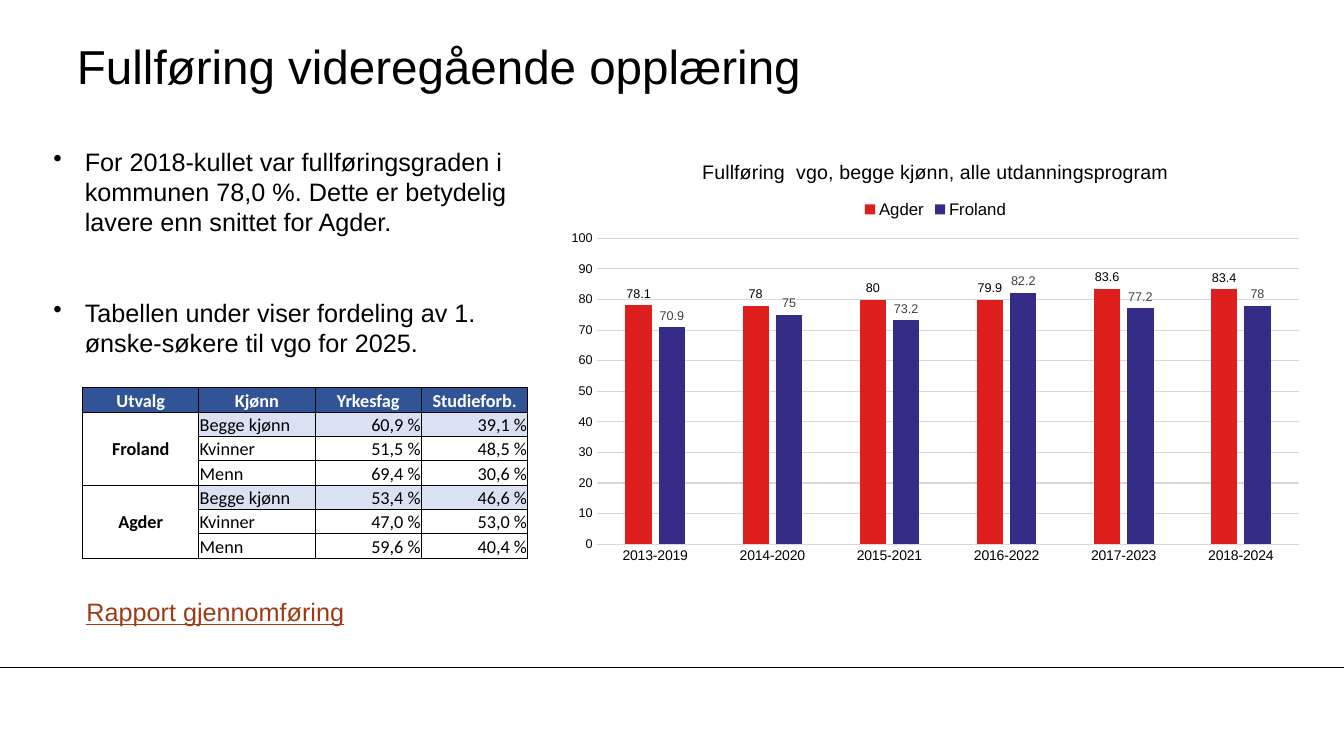
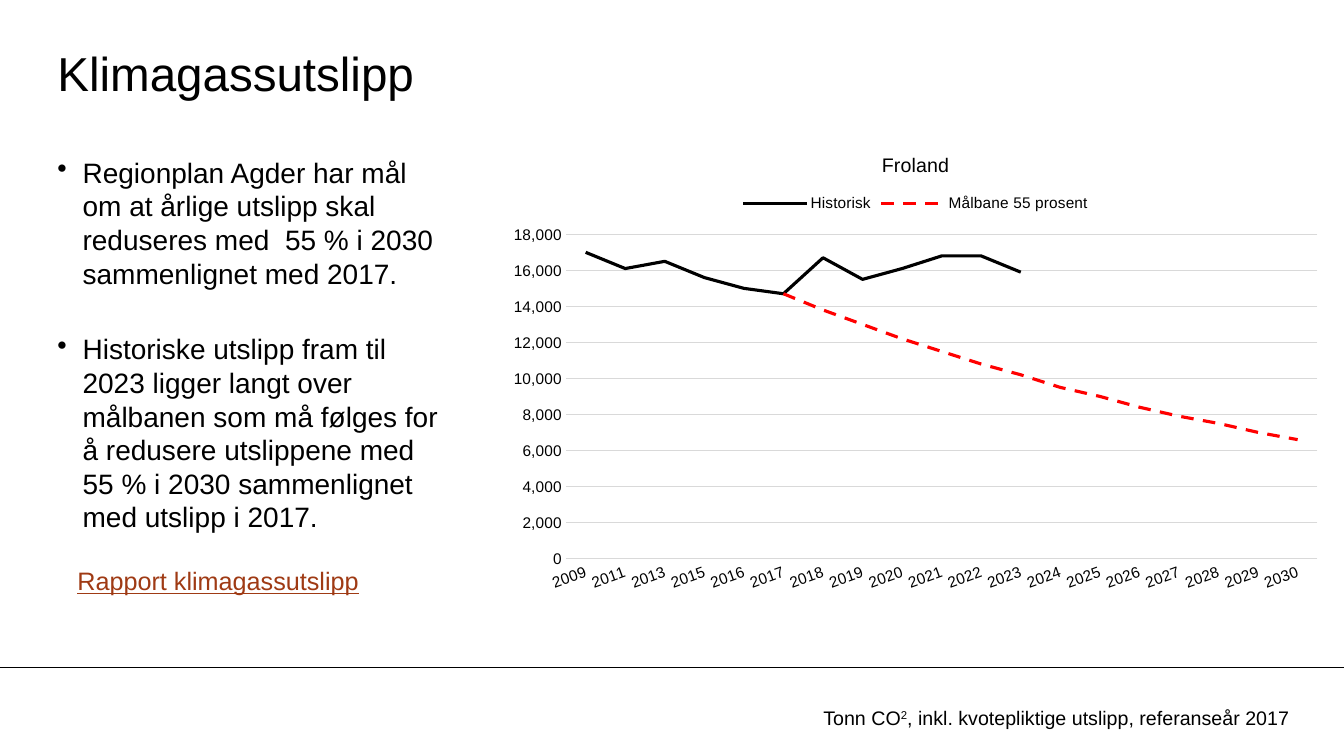
from lxml.etree import SubElement
from pptx import Presentation
from pptx.chart.data import CategoryChartData
from pptx.dml.color import RGBColor
from pptx.enum.chart import XL_CHART_TYPE, XL_LABEL_POSITION, XL_LEGEND_POSITION, XL_MARKER_STYLE, XL_TICK_MARK
from pptx.enum.dml import MSO_LINE
from pptx.enum.shapes import MSO_CONNECTOR
from pptx.enum.text import MSO_ANCHOR, MSO_AUTO_SIZE, PP_ALIGN
from pptx.oxml.ns import qn
from pptx.util import Pt

# Shared look
SLIDE_WIDTH, SLIDE_HEIGHT = 960, 540
TITLE_SIZE = (799, 54)
FOOTER_LINE_TOP = 476.5
FONT = "Arial"
TABLE_FONT = "Calibri"
BLACK = RGBColor(0x00, 0x00, 0x00)
WHITE = RGBColor(0xFF, 0xFF, 0xFF)
GRAY = RGBColor(0xD9, 0xD9, 0xD9)
DARK_GRAY = RGBColor(0x40, 0x40, 0x40)
LINK = RGBColor(0x9F, 0x3A, 0x14)
HEADER_BLUE = RGBColor(0x30, 0x54, 0x96)
ROW_BLUE = RGBColor(0xD9, 0xE1, 0xF2)
AGDER_RED = RGBColor(0xDF, 0x1F, 0x1D)
FROLAND_BLUE = RGBColor(0x34, 0x2C, 0x86)
TARGET_RED = RGBColor(0xFF, 0x00, 0x00)

# Content
APPLICANTS = {
    "Froland": [("Begge kjønn", "60,9 %", "39,1 %"),
                ("Kvinner", "51,5 %", "48,5 %"),
                ("Menn", "69,4 %", "30,6 %")],
    "Agder": [("Begge kjønn", "53,4 %", "46,6 %"),
              ("Kvinner", "47,0 %", "53,0 %"),
              ("Menn", "59,6 %", "40,4 %")],
}
COHORTS = [f"{year}-{year + 6}" for year in range(2013, 2019)]
COMPLETION = {
    "Agder": [78.1, 78, 80, 79.9, 83.6, 83.4],
    "Froland": [70.9, 75, 73.2, 82.2, 77.2, 78],
}
EMISSION_YEARS = [str(year) for year in (2009, 2011, 2013, *range(2015, 2031))]
EMISSIONS = {
    "Historisk": [17000, 16100, 16500, 15600, 15000, 14700, 16700, 15500,
                  16100, 16800, 16800, 15900] + [None] * 7,
    "Målbane 55 prosent": [None] * 5 + [14700, 13800, 13000, 12200, 11500, 10800, 10200,
                                        9500, 9000, 8400, 7900, 7500, 7000, 6600],
}


def apply_format(target, values):
    for name, value in values.items():
        setattr(target, name, value)


def format_font(font, size, color=BLACK, name=FONT, **values):
    apply_format(font, {"size": Pt(size), "name": name, **values})
    font.color.rgb = color


def points(*lengths):
    return [Pt(length) for length in lengths]


def set_margins(target, left, top, right, bottom):
    names = ("margin_left", "margin_top", "margin_right", "margin_bottom")
    apply_format(target, dict(zip(names, points(left, top, right, bottom))))


# Slide frame
def add_slide(presentation, title, left, top):
    slide = presentation.slides.add_slide(presentation.slide_layouts[5])
    line = slide.shapes.add_connector(
        MSO_CONNECTOR.STRAIGHT, *points(0, FOOTER_LINE_TOP, SLIDE_WIDTH, FOOTER_LINE_TOP))
    line.line.color.rgb = BLACK
    line.line.width = Pt(0.75)
    SubElement(line._element.spPr, qn("a:effectLst"))

    shape = slide.shapes.title
    apply_format(shape, dict(zip(("left", "top", "width", "height"),
                                 points(left, top, *TITLE_SIZE))))
    frame = shape.text_frame
    frame.text = title
    apply_format(frame, {"word_wrap": True, "auto_size": MSO_AUTO_SIZE.NONE,
                         "vertical_anchor": MSO_ANCHOR.MIDDLE})
    set_margins(frame, 0, 0, 0, 0)
    paragraph = frame.paragraphs[0]
    paragraph.alignment = PP_ALIGN.LEFT
    format_font(paragraph.runs[0].font, 34)
    return slide


# Text
def add_text_frame(slide, box):
    frame = slide.shapes.add_textbox(*points(*box)).text_frame
    frame.word_wrap = True
    return frame


def add_run(paragraph, text, size, color=BLACK, **values):
    run = paragraph.add_run()
    run.text = text
    format_font(run.font, size, color, **values)
    return run


def add_bullets(slide, box, texts, size, indent, gap):
    frame = add_text_frame(slide, box)
    for index, text in enumerate(texts):
        paragraph = frame.add_paragraph() if index else frame.paragraphs[0]
        properties = paragraph._p.get_or_add_pPr()
        properties.set("marL", str(Pt(indent)))
        properties.set("indent", str(-Pt(indent)))
        SubElement(properties, qn("a:buChar")).set("char", "•")
        paragraph.line_spacing = Pt(size * 1.2)
        paragraph.space_before = Pt(gap if index else 0)
        add_run(paragraph, text, size)
    return frame


def add_report_label(slide, box, text):
    paragraph = add_text_frame(slide, box).paragraphs[0]
    add_run(paragraph, text, 18, LINK, underline=True)


# Table
def format_cell(cell, text, fill, color=BLACK, bold=False,
                alignment=PP_ALIGN.LEFT, anchor=MSO_ANCHOR.BOTTOM):
    cell.vertical_anchor = anchor
    set_margins(cell, 0.7, 0.7, 0.7, 0)
    properties = cell._tc.get_or_add_tcPr()
    for side in ("lnL", "lnR", "lnT", "lnB"):
        border = SubElement(properties, qn(f"a:{side}"), w=str(Pt(0.5)))
        solid = SubElement(border, qn("a:solidFill"))
        SubElement(solid, qn("a:srgbClr"), val=str(BLACK))
    cell.fill.solid()
    cell.fill.fore_color.rgb = fill
    paragraph = cell.text_frame.paragraphs[0]
    paragraph.alignment = alignment
    format_font(paragraph.font, 13, color, TABLE_FONT)
    if text:
        add_run(paragraph, text, 13, color, name=TABLE_FONT, bold=bold)


def add_applicant_table(slide, left, top):
    headers = ("Utvalg", "Kjønn", "Yrkesfag", "Studieforb.")
    widths = (83, 83, 76, 76)
    row_height = 17.38
    row_count = 1 + sum(len(rows) for rows in APPLICANTS.values())
    table = slide.shapes.add_table(
        row_count, len(headers),
        *points(left, top, sum(widths), row_count * row_height)).table
    apply_format(table, {"first_row": False, "horz_banding": False})
    for column, width in zip(table.columns, widths):
        column.width = Pt(width)
    for row in table.rows:
        row.height = Pt(row_height)

    for column, header in enumerate(headers):
        format_cell(table.cell(0, column), header, HEADER_BLUE, WHITE, True, PP_ALIGN.CENTER)
    row = 1
    for area, area_rows in APPLICANTS.items():
        table.cell(row, 0).merge(table.cell(row + len(area_rows) - 1, 0))
        for index, values in enumerate(area_rows):
            format_cell(table.cell(row, 0), "" if index else area, WHITE, bold=True,
                        alignment=PP_ALIGN.CENTER, anchor=MSO_ANCHOR.MIDDLE)
            for column, value in enumerate(values, 1):
                format_cell(table.cell(row, column), value, WHITE if index else ROW_BLUE,
                            alignment=PP_ALIGN.LEFT if column == 1 else PP_ALIGN.RIGHT)
            row += 1


# Charts
def add_chart(slide, kind, box, title, categories, series, maximum, unit,
              category_size, value_size, legend_size):
    data = CategoryChartData()
    data.categories = categories
    for name, values in series.items():
        data.add_series(name, values)
    chart = slide.shapes.add_chart(kind, *points(*box), data).chart
    format_font(chart.font, 10)
    paragraph = chart.chart_title.text_frame.paragraphs[0]
    add_run(paragraph, title, 14, bold=False)

    chart.has_legend = True
    apply_format(chart.legend, {"position": XL_LEGEND_POSITION.TOP, "include_in_layout": False})
    format_font(chart.legend.font, legend_size)

    for axis, size in ((chart.category_axis, category_size), (chart.value_axis, value_size)):
        apply_format(axis, {"major_tick_mark": XL_TICK_MARK.NONE,
                            "minor_tick_mark": XL_TICK_MARK.NONE})
        format_font(axis.tick_labels.font, size)
    category_line = chart.category_axis.format.line
    value_axis = chart.value_axis
    apply_format(value_axis, {"minimum_scale": 0, "maximum_scale": maximum,
                              "major_unit": unit, "has_major_gridlines": True})
    apply_format(value_axis.tick_labels, {"number_format": "#,##0",
                                          "number_format_is_linked": False})
    value_axis.format.line.fill.background()
    for line in (category_line, value_axis.major_gridlines.format.line):
        line.color.rgb = GRAY
        line.width = Pt(0.75)
    chart.plots[0].vary_by_categories = False
    return chart


def add_completion_chart(slide):
    chart = add_chart(slide, XL_CHART_TYPE.COLUMN_CLUSTERED, (397.5, 101, 541.5, 308),
                      "Fullføring  vgo, begge kjønn, alle utdanningsprogram",
                      COHORTS, COMPLETION, 100, 10, 10, 9, 12)
    plot = chart.plots[0]
    apply_format(plot, {"gap_width": 219, "overlap": -27})
    colors = ((AGDER_RED, BLACK), (FROLAND_BLUE, DARK_GRAY))
    for series, (bar_color, label_color) in zip(plot.series, colors):
        series.format.fill.solid()
        series.format.fill.fore_color.rgb = bar_color
        labels = series.data_labels
        apply_format(labels, {"show_value": True, "position": XL_LABEL_POSITION.OUTSIDE_END})
        format_font(labels.font, 9, label_color)


def add_emission_chart(slide):
    chart = add_chart(slide, XL_CHART_TYPE.LINE, (355, 96, 598, 333), "Froland",
                      EMISSION_YEARS, EMISSIONS, 18000, 2000, 11, 11, 11)
    # Slant the years by 20 degrees
    body = chart.category_axis._element.find(f"{qn('c:txPr')}/{qn('a:bodyPr')}")
    body.set("rot", str(-20 * 60000))
    styles = ((BLACK, MSO_LINE.SOLID), (TARGET_RED, MSO_LINE.DASH))
    for series, (color, dash) in zip(chart.plots[0].series, styles):
        series.smooth = False
        series.marker.style = XL_MARKER_STYLE.NONE
        line = series.format.line
        line.color.rgb = color
        apply_format(line, {"width": Pt(2.25), "dash_style": dash})


# Slides
def build_completion_slide(presentation):
    slide = add_slide(presentation, "Fullføring videregående opplæring", 55, 19.5)
    add_bullets(slide, (31, 101, 372, 160), [
        "For 2018-kullet var fullføringsgraden i kommunen 78,0 %. "
        "Dette er betydelig lavere enn snittet for Agder.",
        "Tabellen under viser fordeling av 1. ønske-søkere til vgo for 2025.",
    ], 18, 22.5, 43)
    add_applicant_table(slide, 59, 277)
    add_report_label(slide, (54.7, 422.6, 202, 29), "Rapport gjennomføring")
    add_completion_chart(slide)


def build_emission_slide(presentation):
    slide = add_slide(presentation, "Klimagassutslipp", 41, 24.5)
    frame = add_bullets(slide, (41, 111, 281, 271), [
        "Regionplan Agder har mål om at årlige utslipp skal reduseres med  55 % i 2030 "
        "sammenlignet med 2017.",
        "Historiske utslipp fram til 2023 ligger langt over målbanen som må følges for å "
        "redusere utslippene med 55 % i 2030 sammenlignet med utslipp i 2017.",
    ], 20, 18, 30)
    set_margins(frame, 0, 0, 0, 0)
    caption = add_text_frame(slide, (581, 500.4, 366.5, 24.5)).paragraphs[0]
    add_run(caption, "Tonn CO", 14)
    exponent = add_run(caption, "2", 14)
    exponent._r.get_or_add_rPr().set("baseline", "30000")
    add_run(caption, ", inkl. kvotepliktige utslipp, referanseår 2017", 14)
    add_report_label(slide, (48.2, 400.3, 227.5, 29), "Rapport klimagassutslipp")
    add_emission_chart(slide)


def main():
    presentation = Presentation()
    presentation.slide_width, presentation.slide_height = points(SLIDE_WIDTH, SLIDE_HEIGHT)
    build_completion_slide(presentation)
    build_emission_slide(presentation)
    presentation.save("out.pptx")


if __name__ == "__main__":
    main()
